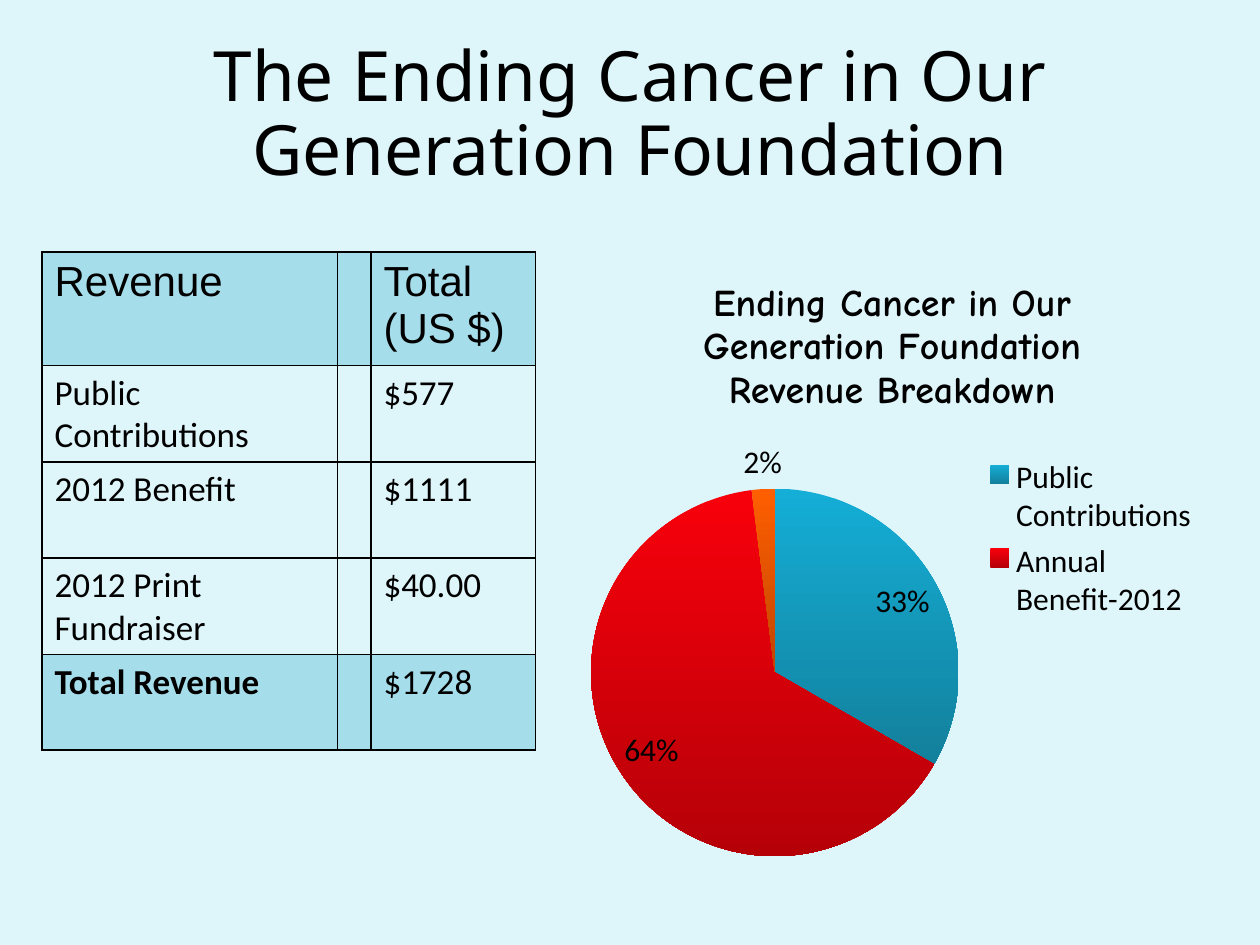
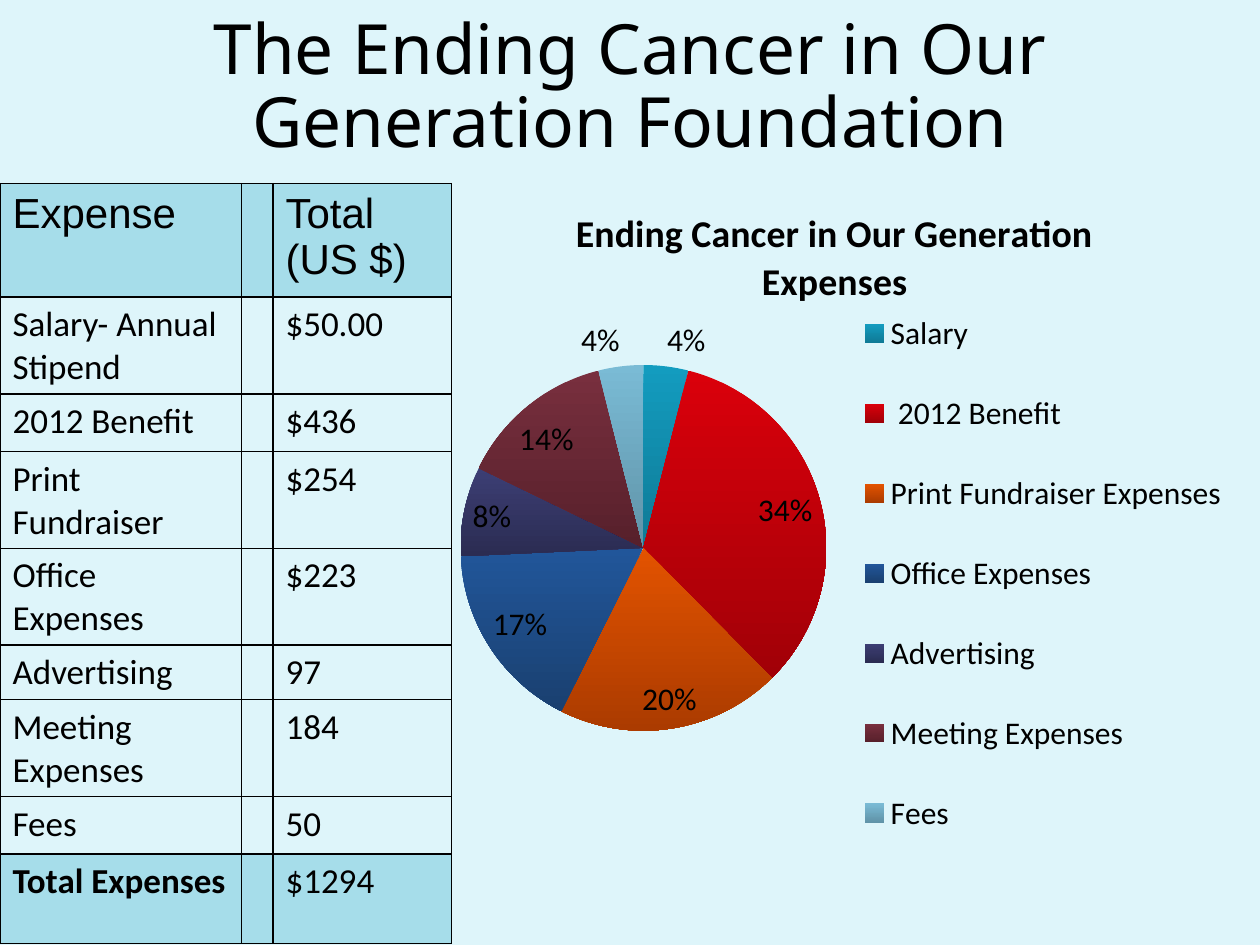
import pptx
import pptx.chart.data
import pptx.dml.color
import pptx.enum.chart
import pptx.enum.text
import pptx.oxml
import pptx.oxml.ns
import pptx.util
from lxml import etree

Pt = pptx.util.Pt

# Shared look
COLORS = {"background": "DEF5FA", "band": "A6DDEA", "text": "000000", "border": "000000"}
FONTS = {"title": "Noto Sans", "header": "Arial", "body": "Calibri", "playful": "Comic Neue"}
TITLE = "The Ending Cancer in Our Generation Foundation"
TITLE_SIZE, HEADER_SIZE, BODY_SIZE, CHART_SIZE = 39.6, 24, 20, 18

# Content: boxes in points, chart layouts as fractions (x, y, width, height)
SLIDES = [
    {
        "title_top": 21.6,
        "table": {
            "left": 24, "top": 144,
            "columns": [169, 19, 94],
            "row_heights": [54.7] * 5,
            "rows": [
                ("Revenue", "Total (US $)"),
                ("Public Contributions", "$577"),
                ("2012 Benefit", "$1111"),
                ("2012 Print Fundraiser", "$40.00"),
                ("Total Revenue", "$1728"),
            ],
        },
        "chart": {
            "box": (318, 144, 384, 356),
            "title": "Ending Cancer in Our Generation Foundation Revenue Breakdown",
            "title_font": FONTS["playful"],
            "plot": (0.05, 0.38, 0.55, 0.59),
            "legend": (0.63, 0.32, 0.33, 0.28),
            "hidden_legend_entries": [2],
            # name, percentage, top colour, bottom colour
            "slices": [
                ("Public Contributions", 33, "14AED6", "13809C"),
                ("Annual Benefit-2012", 64, "F7000B", "B60008"),
                ("Print Fundraiser", 2, "FF5F00", "C04500"),
            ],
        },
    },
    {
        "title_top": 6,
        "table": {
            "left": 0, "top": 105,
            "columns": [138, 18, 102],
            "row_heights": [63, 54, 33, 54, 54, 30, 54, 33, 51],
            "rows": [
                ("Expense", "Total (US $)"),
                ("Salary- Annual Stipend", "$50.00"),
                ("2012 Benefit", "$436"),
                ("Print Fundraiser", "$254"),
                ("Office Expenses", "$223"),
                ("Advertising", "97"),
                ("Meeting Expenses", "184"),
                ("Fees", "50"),
                ("Total Expenses", "$1294"),
            ],
        },
        "chart": {
            "box": (234, 102, 486, 414),
            "title": "Ending Cancer in Our Generation Expenses",
            "title_font": FONTS["body"],
            "plot": (0.06, 0.25, 0.43, 0.52),
            "legend": (0.52, 0.13, 0.45, 0.83),
            "hidden_legend_entries": [],
            "slices": [
                ("Salary", 4, "139CBF", "0F7A96"),
                (" 2012 Benefit", 34, "DA000B", "A10007"),
                ("Print Fundraiser Expenses", 20, "E35300", "AB3B00"),
                ("Office Expenses", 17, "21569A", "1A4070"),
                ("Advertising", 8, "3C3E74", "2B2C52"),
                ("Meeting Expenses", 14, "782F3E", "57202B"),
                ("Fees", 4, "7ABBD5", "6093A8"),
            ],
        },
    },
]


def rgb(value):
    return pptx.dml.color.RGBColor.from_string(value)


def style_font(font, name, size, bold=False):
    font.name = name
    font.size = Pt(size)
    font.bold = bold
    font.color.rgb = rgb(COLORS["text"])


def add_title(page, top):
    box = page.shapes.add_textbox(Pt(36), Pt(top), Pt(648), Pt(90))
    frame = box.text_frame
    frame.word_wrap = True
    frame.vertical_anchor = pptx.enum.text.MSO_ANCHOR.MIDDLE
    para = frame.paragraphs[0]
    para.text = TITLE
    para.alignment = pptx.enum.text.PP_ALIGN.CENTER
    para.line_spacing = 0.88
    style_font(para.font, FONTS["title"], TITLE_SIZE)


# Tables
def add_borders(cell):
    properties = cell._tc.get_or_add_tcPr()
    for index, side in enumerate(("lnL", "lnR", "lnT", "lnB")):
        line = pptx.oxml.parse_xml(
            f'<a:{side} {pptx.oxml.ns.nsdecls("a")} w="12700"><a:solidFill>'
            f'<a:srgbClr val="{COLORS["border"]}"/></a:solidFill></a:{side}>')
        properties.insert(index, line)


def add_money_table(page, content):
    rows, columns = content["rows"], content["columns"]
    heights = content["row_heights"]
    table = page.shapes.add_table(
        len(rows), len(columns), Pt(content["left"]), Pt(content["top"]),
        Pt(sum(columns)), Pt(sum(heights))).table
    table.first_row = table.horz_banding = False
    for column, width in zip(table.columns, columns):
        column.width = Pt(width)
    last = len(rows) - 1
    for index, (label, amount) in enumerate(rows):
        table.rows[index].height = Pt(heights[index])
        font_name, size = FONTS["body"], BODY_SIZE
        if index == 0:
            font_name, size = FONTS["header"], HEADER_SIZE
        for position, text in enumerate((label, "", amount)):
            cell = table.cell(index, position)
            if index in (0, last):
                cell.fill.solid()
                cell.fill.fore_color.rgb = rgb(COLORS["band"])
            else:
                cell.fill.background()
            add_borders(cell)
            para = cell.text_frame.paragraphs[0]
            para.text = text
            style_font(para.font, font_name, size, bold=index == last and position == 0)


# Charts
def manual_layout(area, inner=False):
    target = '<c:layoutTarget val="inner"/>' if inner else ""
    modes = "".join(f'<c:{axis}Mode val="edge"/>' for axis in "xy")
    sizes = "".join(f'<c:{key} val="{value}"/>' for key, value in zip("xywh", area))
    return pptx.oxml.parse_xml(
        f'<c:layout {pptx.oxml.ns.nsdecls("c")}><c:manualLayout>'
        f'{target}{modes}{sizes}</c:manualLayout></c:layout>')


def place_plot(chart, area):
    plot_area = chart._chartSpace.chart.plotArea
    for old in plot_area.findall(pptx.oxml.ns.qn("c:layout")):
        plot_area.remove(old)
    plot_area.insert(0, manual_layout(area, inner=True))


def place_legend(chart, area, hidden):
    chart.has_legend = True
    chart.legend.position = pptx.enum.chart.XL_LEGEND_POSITION.RIGHT
    chart.legend.include_in_layout = False
    style_font(chart.legend.font, FONTS["body"], CHART_SIZE)
    legend = chart.legend._element
    for old in legend.findall(pptx.oxml.ns.qn("c:layout")):
        legend.remove(old)
    anchor = legend.find(pptx.oxml.ns.qn("c:legendPos"))
    anchor.addnext(manual_layout(area))
    for index in reversed(hidden):
        entry = etree.Element(pptx.oxml.ns.qn("c:legendEntry"))
        for tag, value in (("c:idx", index), ("c:delete", 1)):
            etree.SubElement(entry, pptx.oxml.ns.qn(tag)).set("val", str(value))
        anchor.addnext(entry)


def add_pie(page, content):
    slices = content["slices"]
    data = pptx.chart.data.CategoryChartData()
    data.categories = [name for name, *_ in slices]
    data.add_series(content["title"], [share for _, share, *_ in slices])
    chart = page.shapes.add_chart(
        pptx.enum.chart.XL_CHART_TYPE.PIE, *map(Pt, content["box"]), data).chart
    style_font(chart.font, FONTS["body"], CHART_SIZE)

    chart.has_title = True
    para = chart.chart_title.text_frame.paragraphs[0]
    para.text = content["title"]
    style_font(para.font, content["title_font"], CHART_SIZE * 1.2, bold=True)
    chart.chart_title.include_in_layout = False

    plot = chart.plots[0]
    plot.vary_by_categories = True
    for index, (_, _, *shades) in enumerate(slices):
        fill = plot.series[0].points[index].format.fill
        fill.gradient()
        fill.gradient_angle = 270
        for stop, shade in zip(fill.gradient_stops, shades):
            stop.color.rgb = rgb(shade)

    # The values are percentages already
    plot.has_data_labels = True
    labels = plot.data_labels
    labels.show_value = True
    labels.number_format = '0"%"'
    labels.number_format_is_linked = False
    labels.position = pptx.enum.chart.XL_LABEL_POSITION.BEST_FIT
    style_font(labels.font, FONTS["body"], CHART_SIZE)

    place_plot(chart, content["plot"])
    place_legend(chart, content["legend"], content["hidden_legend_entries"])


def main():
    deck = pptx.Presentation()
    deck.slide_width, deck.slide_height = Pt(720), Pt(540)
    for content in SLIDES:
        page = deck.slides.add_slide(deck.slide_layouts[6])
        page.background.fill.solid()
        page.background.fill.fore_color.rgb = rgb(COLORS["background"])
        add_title(page, content["title_top"])
        add_pie(page, content["chart"])
        add_money_table(page, content["table"])
    deck.save("out.pptx")


if __name__ == "__main__":
    main()
